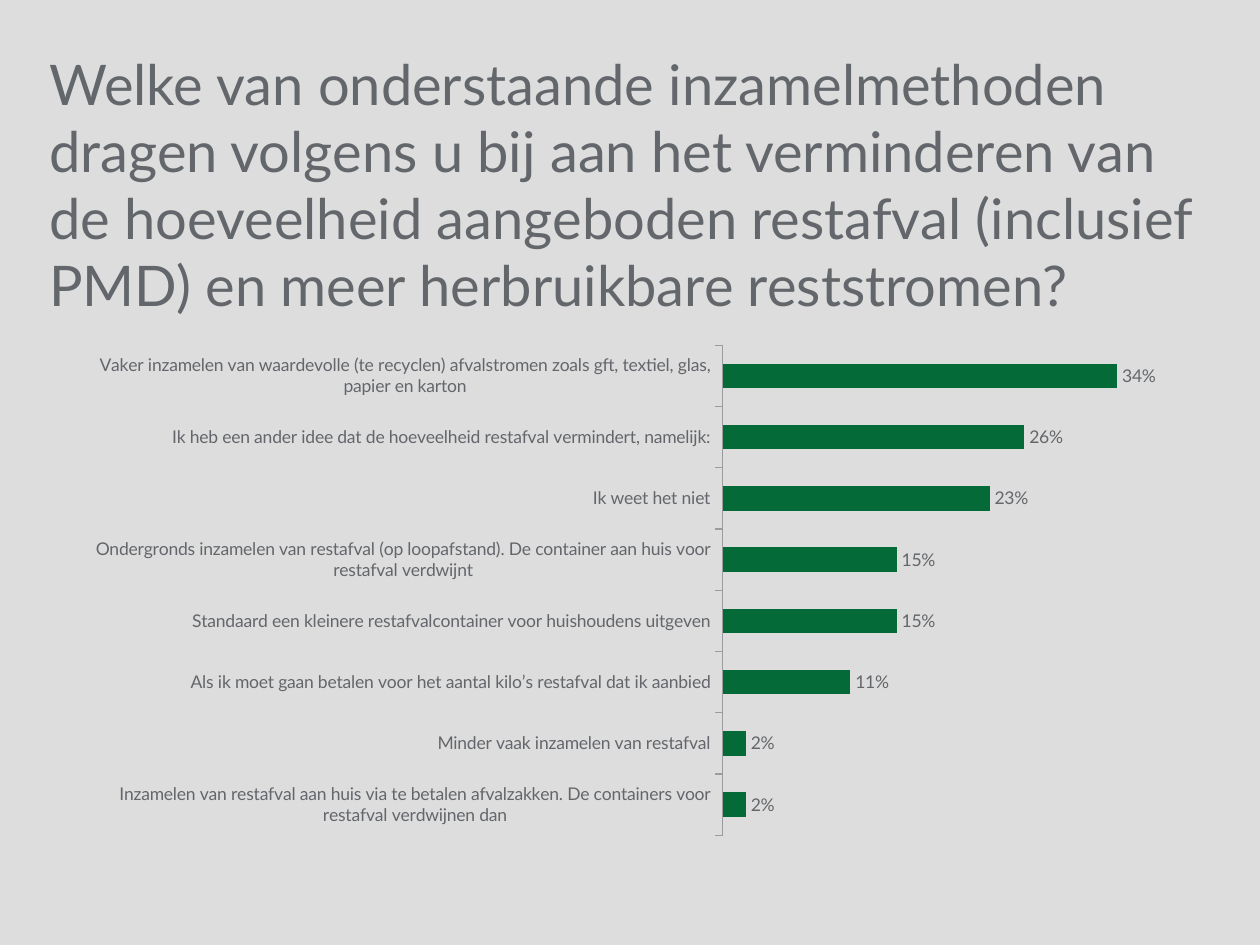
from pptx import Presentation
from pptx.chart.data import CategoryChartData
from pptx.dml.color import RGBColor
from pptx.enum.chart import (XL_CHART_TYPE, XL_LABEL_POSITION,
                             XL_TICK_LABEL_POSITION, XL_TICK_MARK)
from pptx.enum.text import MSO_ANCHOR, MSO_AUTO_SIZE, PP_ALIGN
from pptx.util import Inches, Pt

BACKGROUND = RGBColor(0xDD, 0xDD, 0xDD)
GREY = RGBColor(0x63, 0x66, 0x6A)
AXIS_GREY = RGBColor(0x9A, 0x9C, 0x9E)
GREEN = RGBColor(0x04, 0x6A, 0x38)
FONT = "Lato"

QUESTION = ("Welke van onderstaande inzamelmethoden dragen volgens u bij aan het "
            "verminderen van de hoeveelheid aangeboden restafval (inclusief PMD) "
            "en meer herbruikbare reststromen?")

ANSWERS = {
    "Vaker inzamelen van waardevolle (te recyclen) afvalstromen zoals gft, "
    "textiel, glas, papier en karton": 0.34,
    "Ik heb een ander idee dat de hoeveelheid restafval vermindert, namelijk:": 0.26,
    "Ik weet het niet": 0.23,
    "Ondergronds inzamelen van restafval (op loopafstand). De container aan huis "
    "voor restafval verdwijnt": 0.15,
    "Standaard een kleinere restafvalcontainer voor huishoudens uitgeven": 0.15,
    "Als ik moet gaan betalen voor het aantal kilo’s restafval dat ik aanbied": 0.11,
    "Minder vaak inzamelen van restafval": 0.02,
    "Inzamelen van restafval aan huis via te betalen afvalzakken. De containers "
    "voor restafval verdwijnen dan": 0.02,
}


class SurveySlide:
    """Holds the style and the current slide."""

    def __init__(self, presentation):
        self.slide = presentation.slides.add_slide(presentation.slide_layouts[5])
        fill = self.slide.background.fill
        fill.solid()
        fill.fore_color.rgb = BACKGROUND

    def style(self, font, size):
        font.name = FONT
        font.size = Pt(size)
        font.bold = False
        font.color.rgb = GREY

    def title(self, text, left, top, width, height):
        title = self.slide.shapes.title
        title.left, title.top = Inches(left), Inches(top)
        title.width, title.height = Inches(width), Inches(height)
        frame = title.text_frame
        frame.text = text
        frame.word_wrap = True
        frame.auto_size = MSO_AUTO_SIZE.NONE
        frame.vertical_anchor = MSO_ANCHOR.TOP
        frame.margin_left = frame.margin_right = 0
        frame.margin_top = frame.margin_bottom = 0
        question = frame.paragraphs[0]
        question.alignment = PP_ALIGN.LEFT
        self.style(question.runs[0].font, 32)

    def bar_chart(self, answers, left, top, width, height):
        data = CategoryChartData(number_format="0%")
        data.categories = list(answers)
        data.add_series("Series 1", list(answers.values()))
        chart = self.slide.shapes.add_chart(
            XL_CHART_TYPE.BAR_CLUSTERED, Inches(left), Inches(top),
            Inches(width), Inches(height), data).chart
        chart.has_legend = False
        chart.has_title = False
        self.style(chart.font, 10)

        # Axes: answers run from the top down, percentages stay hidden
        answer_axis = chart.category_axis
        answer_axis.reverse_order = True
        answer_axis.tick_label_position = XL_TICK_LABEL_POSITION.LOW
        answer_axis.major_tick_mark = XL_TICK_MARK.OUTSIDE
        answer_axis.format.line.color.rgb = AXIS_GREY
        answer_axis.format.line.width = Pt(0.75)
        share_axis = chart.value_axis
        share_axis.minimum_scale = 0
        share_axis.maximum_scale = 0.4
        share_axis.has_major_gridlines = False
        share_axis.visible = False

        # Bars and their percentages
        plot = chart.plots[0]
        plot.gap_width = 150
        plot.vary_by_categories = False
        shares = plot.series[0]
        shares.invert_if_negative = False
        shares.format.fill.solid()
        shares.format.fill.fore_color.rgb = GREEN
        labels = shares.data_labels
        labels.show_value = True
        labels.number_format = "0%"
        labels.number_format_is_linked = False
        labels.position = XL_LABEL_POSITION.OUTSIDE_END
        self.style(labels.font, 10)


def main():
    presentation = Presentation()
    presentation.slide_width = Inches(10)
    presentation.slide_height = Inches(7.5)
    survey = SurveySlide(presentation)
    survey.title(QUESTION, 0.39, 0.39, 9.21, 1.18)
    survey.bar_chart(ANSWERS, 0.58, 2.66, 9.02, 4.05)
    presentation.save("out.pptx")


if __name__ == "__main__":
    main()
